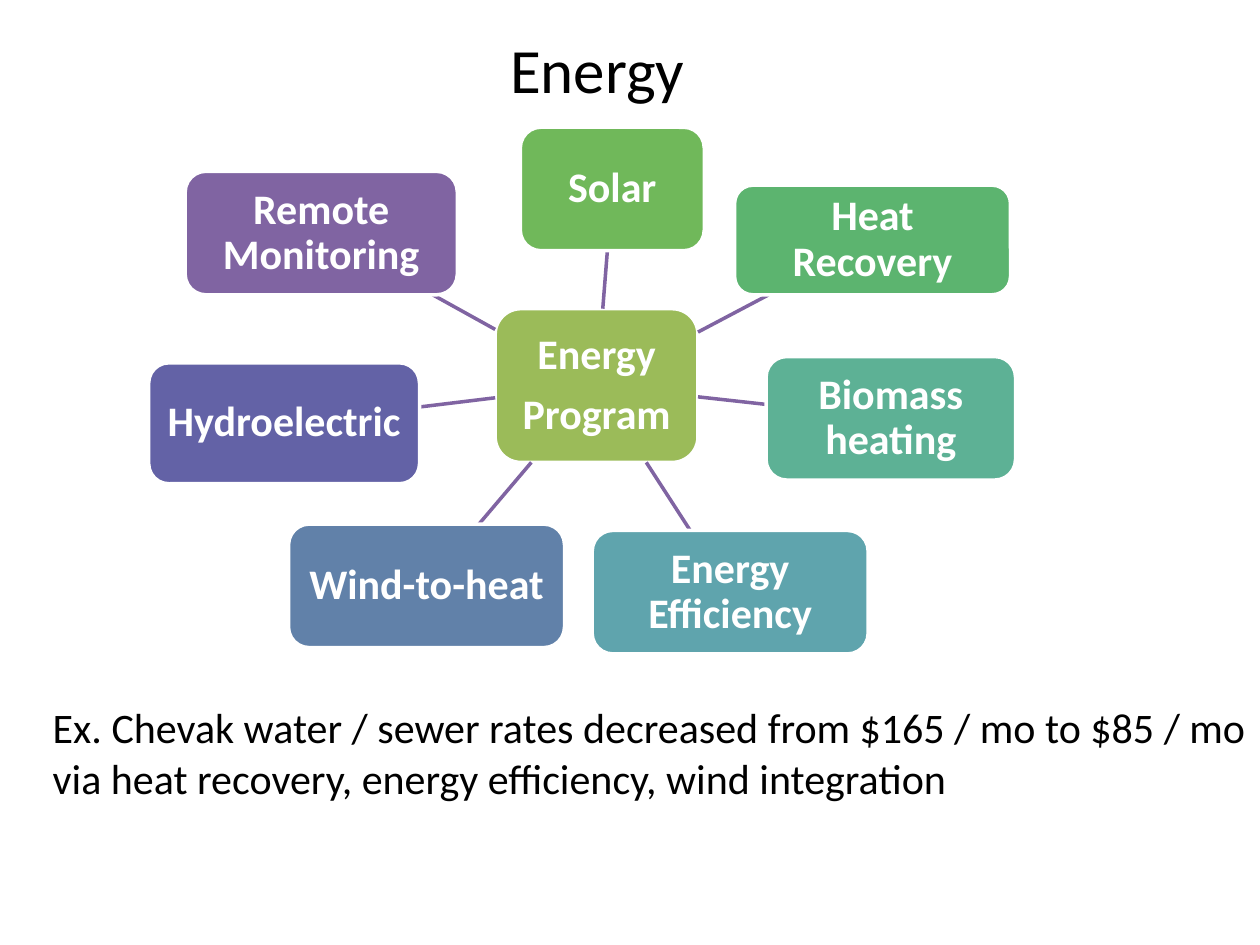
from pptx import Presentation
from pptx.dml.color import RGBColor
from pptx.enum.shapes import MSO_CONNECTOR, MSO_SHAPE
from pptx.enum.text import MSO_ANCHOR, PP_ALIGN
from pptx.oxml.ns import qn
from pptx.util import Inches, Pt
from lxml import etree

ROUND = MSO_SHAPE.ROUNDED_RECTANGLE
LINE = MSO_CONNECTOR.STRAIGHT
MID = MSO_ANCHOR.MIDDLE
CENTER = PP_ALIGN.CENTER

TITLE = ("Energy", (3.95, 0.19, 1.6, 0.71))
NOTE = (
    "Ex. Chevak water / sewer rates decreased from $165 / mo to $85 / mo "
    "via heat recovery, energy efficiency, wind integration",
    (0.32, 5.52, 9.68, 1.72),
)
HUB = (["Energy", "Program"], (3.93, 2.45, 1.61, 1.22), "9BBB59")
NODES = [
    (["Solar"], (4.13, 1.01, 1.46, 0.98), "70B85A"),
    (["Heat Recovery"], (5.83, 1.47, 2.19, 0.87), "5CB46F"),
    (["Biomass heating"], (6.08, 2.83, 1.98, 0.98), "5DB195"),
    (["Energy Efficiency"], (4.7, 4.21, 2.19, 0.98), "5FA4AD"),
    (["Wind-to-heat"], (2.29, 4.16, 2.19, 0.98), "6181A9"),
    (["Hydroelectric"], (1.18, 2.88, 2.15, 0.96), "6362A6"),
    (["Remote Monitoring"], (1.47, 1.36, 2.16, 0.98), "8064A2"),
]
THEME = {
    "font": "Calibri", "title": 36, "body": 24, "rule": 2,
    "ink": "000000", "light": "FFFFFF", "spoke": "8064A2",
}
PAD = Inches(0.07)
BOX = {
    "word_wrap": True, "vertical_anchor": MID,
    "margin_left": PAD, "margin_right": PAD,
    "margin_top": PAD, "margin_bottom": PAD,
}
LABEL = {
    "alignment": CENTER, "line_spacing": 0.9,
    "space_after": Pt(0.35 * THEME["body"]),
}


def apply(item, values):
    for name, value in values.items():
        setattr(item, name, value)


def write(frame, lines, size, color, bold=False, para={}):
    for i, line in enumerate(lines):
        p = frame.paragraphs[0] if i == 0 else frame.add_paragraph()
        apply(p, para)
        run = p.add_run()
        run.text = line
        apply(run.font, {"name": THEME["font"], "size": Pt(size), "bold": bold})
        run.font.color.rgb = RGBColor.from_string(color)


def stroke(line, color):
    line.color.rgb = RGBColor.from_string(color)
    line.width = Pt(THEME["rule"])


def center(box):
    x, y, w, h = box
    return x + w / 2, y + h / 2


def edge(box, goal):
    x, y = center(box)
    dx, dy = goal[0] - x, goal[1] - y
    part = 1 / max(abs(dx) / (box[2] / 2), abs(dy) / (box[3] / 2))
    return Inches(x + dx * part), Inches(y + dy * part)


def add_node(shapes, lines, box, color):
    node = shapes.add_shape(ROUND, *map(Inches, box))
    node.shadow.inherit = False
    node.fill.solid()
    node.fill.fore_color.rgb = RGBColor.from_string(color)
    stroke(node.line, THEME["light"])
    apply(node.text_frame, BOX)
    write(node.text_frame, lines, THEME["body"], THEME["light"], True, LABEL)


def add_spoke(shapes, hub, box):
    start, end = edge(hub, center(box)), edge(box, center(hub))
    spoke = shapes.add_connector(LINE, *start, *end)
    stroke(spoke.line, THEME["spoke"])
    etree.SubElement(spoke._element.spPr, qn("a:effectLst"))


def add_text(shapes, text, box, size, wrap):
    frame = shapes.add_textbox(*map(Inches, box)).text_frame
    frame.word_wrap = wrap
    write(frame, [text], size, THEME["ink"])


def main():
    deck = Presentation()
    deck.slide_width, deck.slide_height = Inches(10), Inches(7.5)
    shapes = deck.slides.add_slide(deck.slide_layouts[6]).shapes
    add_node(shapes, *HUB)
    for node in NODES:
        add_spoke(shapes, HUB[1], node[1])
        add_node(shapes, *node)
    add_text(shapes, *NOTE, THEME["body"], True)
    add_text(shapes, *TITLE, THEME["title"], False)
    deck.save("out.pptx")


if __name__ == "__main__":
    main()
